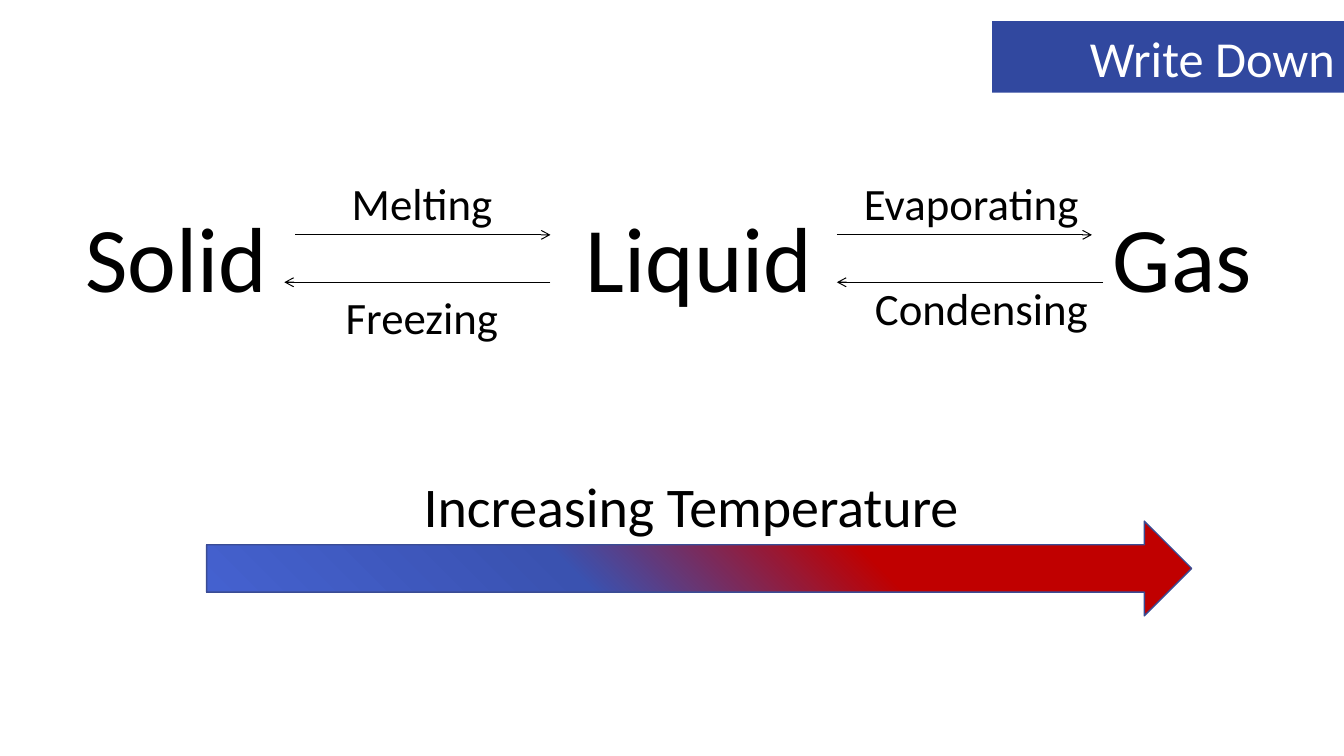
from copy import deepcopy

from pptx import Presentation
from pptx.dml.color import RGBColor
from pptx.enum.shapes import MSO_CONNECTOR, MSO_SHAPE
from pptx.enum.text import MSO_ANCHOR, MSO_AUTO_SIZE, PP_ALIGN
from pptx.oxml.ns import qn
from pptx.util import Inches, Pt

STRAIGHT = MSO_CONNECTOR.STRAIGHT
RECTANGLE, RIGHT_ARROW = MSO_SHAPE.RECTANGLE, MSO_SHAPE.RIGHT_ARROW
LEFT, CENTER, RIGHT = PP_ALIGN.LEFT, PP_ALIGN.CENTER, PP_ALIGN.RIGHT
MIDDLE = MSO_ANCHOR.MIDDLE
GROW = MSO_AUTO_SIZE.SHAPE_TO_FIT_TEXT

BLACK = RGBColor(0x00, 0x00, 0x00)
WHITE = RGBColor(0xFF, 0xFF, 0xFF)
BANNER_BLUE = RGBColor(0x31, 0x48, 0x9F)
OUTLINE_BLUE = RGBColor(0x3A, 0x4C, 0x94)
HOT_RED = RGBColor(0xC0, 0x00, 0x00)
COOL_BLUE = RGBColor(0x3A, 0x52, 0xB0)
COLD_BLUE = RGBColor(0x45, 0x62, 0xD1)

FONT = "Calibri"
STATES = [("Solid", 0.75, 2.18), ("Liquid", 5.71, 2.46), ("Gas", 10.94, 1.71)]
CHANGES = [
    ("Melting", 3.39, 1.69, 1.61),
    ("Evaporating", 8.47, 1.69, 2.36),
    ("Condensing", 8.58, 2.74, 2.34),
    ("Freezing", 3.33, 2.83, 1.73),
]
HEATING_Y, COOLING_Y = 2.33, 2.8
CHANGE_ARROWS = [
    (2.93, 5.46, HEATING_Y),
    (8.3, 10.83, HEATING_Y),
    (10.94, 8.3, COOLING_Y),
    (5.46, 2.82, COOLING_Y),
]
TEMPERATURE_STOPS = [(0.33, HOT_RED), (0.62, COOL_BLUE), (1, COLD_BLUE)]


def write_text(box, text, size, color, align, wrap):
    """Fill a box with one line of styled text."""
    frame = box.text_frame
    frame.word_wrap = wrap
    frame.auto_size = GROW
    para = frame.paragraphs[0]
    para.alignment = align
    span = para.add_run()
    span.text = text
    span.font.name = FONT
    span.font.size = Pt(size)
    span.font.color.rgb = color


def add_label(page, text, left, top, width, height, size, align=LEFT, wrap=False):
    """Add a black text label."""
    box = page.shapes.add_textbox(Inches(left), Inches(top), Inches(width), Inches(height))
    write_text(box, text, size, BLACK, align, wrap)


def add_change_arrow(page, start, end, y):
    """Add a thin horizontal arrow between two states."""
    arrow = page.shapes.add_connector(
        STRAIGHT, Inches(start), Inches(y), Inches(end), Inches(y)
    )
    arrow.line.color.rgb = BLACK
    arrow.line.width = Pt(0.75)
    tail = arrow.line._get_or_add_ln().makeelement(qn("a:tailEnd"), {"type": "arrow"})
    arrow.line._get_or_add_ln().append(tail)
    properties = arrow._element.spPr
    properties.append(properties.makeelement(qn("a:effectLst"), {}))


def add_temperature_arrow(page):
    """Add the block arrow that shades from cold blue to hot red."""
    arrow = page.shapes.add_shape(
        RIGHT_ARROW, Inches(2.05), Inches(5.17), Inches(9.77), Inches(0.94)
    )
    arrow.shadow.inherit = False
    arrow.line.color.rgb = OUTLINE_BLUE
    arrow.line.width = Pt(1)
    arrow.fill.gradient()
    arrow.fill.gradient_angle = 225
    stop_list = arrow._element.spPr.find(qn("a:gradFill")).find(qn("a:gsLst"))
    stop_list.append(deepcopy(stop_list[-1]))
    for stop, (position, color) in zip(arrow.fill.gradient_stops, TEMPERATURE_STOPS):
        stop.position = position
        stop.color.rgb = color


def add_banner(page, text):
    """Add the blue banner at the top right."""
    banner = page.shapes.add_shape(
        RECTANGLE, Inches(9.84), Inches(0.21), Inches(3.5), Inches(0.71)
    )
    banner.shadow.inherit = False
    banner.fill.solid()
    banner.fill.fore_color.rgb = BANNER_BLUE
    banner.line.fill.background()
    write_text(banner, text, 36, WHITE, RIGHT, True)
    banner.text_frame.vertical_anchor = MIDDLE


def main():
    """Build the changes of state slide."""
    deck = Presentation()
    deck.slide_width, deck.slide_height = Inches(13.33), Inches(7.5)
    page = deck.slides.add_slide(deck.slide_layouts[6])
    for text, left, width in STATES:
        add_label(page, text, left, 1.94, width, 1.21, 66, wrap=True)
    for start, end, y in CHANGE_ARROWS:
        add_change_arrow(page, start, end, y)
    for text, left, top, width in CHANGES:
        add_label(page, text, left, top, width, 0.64, 32)
    add_temperature_arrow(page)
    add_label(page, "Increasing Temperature", 4.07, 4.63, 5.57, 0.77, 40, CENTER)
    add_banner(page, "Write Down")
    deck.save("out.pptx")


if __name__ == "__main__":
    main()
